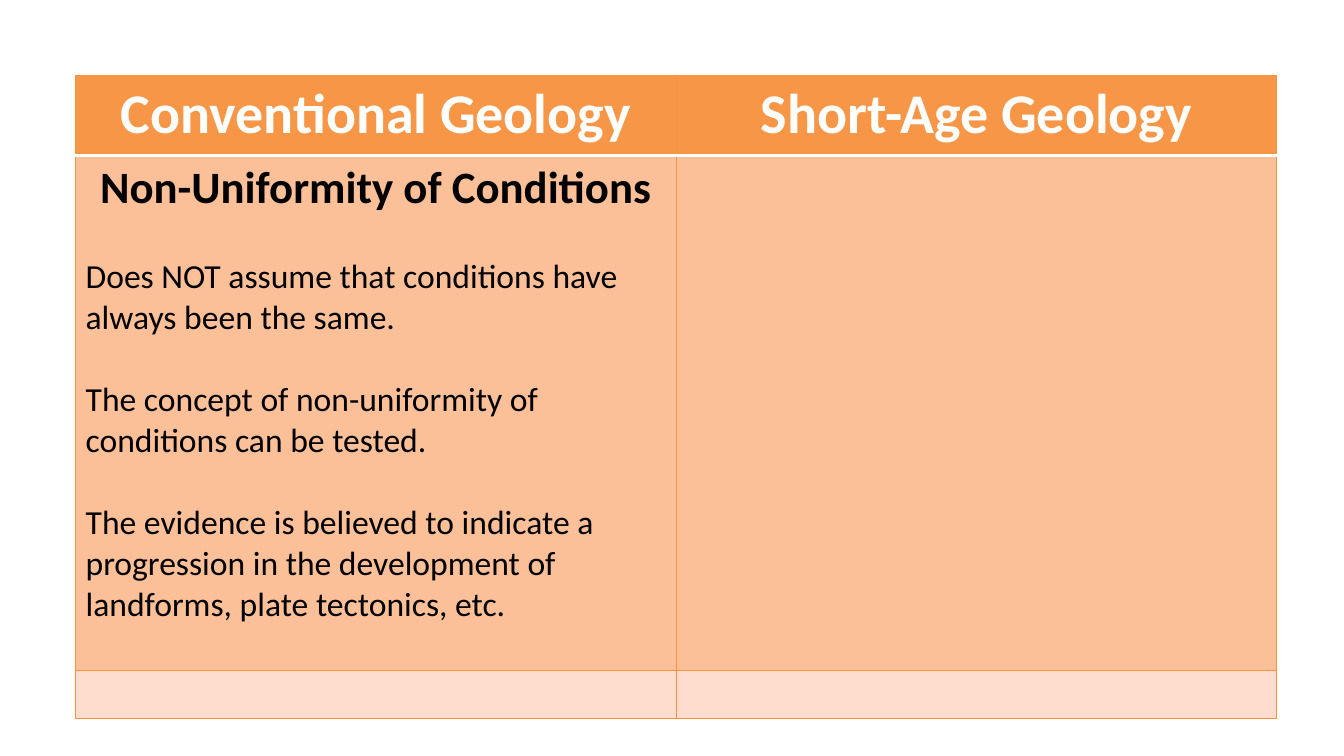
"""Build a slide with a table comparing conventional and short-age geology."""
from dataclasses import dataclass

from lxml import etree
from pptx import Presentation
from pptx.dml.color import RGBColor
from pptx.enum.text import PP_ALIGN
from pptx.oxml.ns import qn
from pptx.table import Table, _Cell
from pptx.util import Pt

CENTER, LEFT = PP_ALIGN.CENTER, PP_ALIGN.LEFT
PX = 9525
FONT = "Calibri"
COLORS = {
    "white": "FFFFFF",
    "black": "000000",
    "header": "F79646",
    "body": "FCC099",
    "footer": "FEDDCE",
    "border": "F69240",
}
SLIDE_W, SLIDE_H = 1280, 720
TABLE_X, TABLE_Y, COL_W = 72, 72, 572
BODY_GAP = 29.3


@dataclass(frozen=True)
class Para:
    text: str
    size: int = 24
    color: str = "black"
    bold: bool = False
    align: PP_ALIGN = LEFT
    gap: float = BODY_GAP


@dataclass(frozen=True)
class Row:
    height: int
    fill: str
    cells: tuple[tuple[Para, ...], ...] = ((), ())
    top: str = "border"
    bottom: str = "border"


def header(text: str) -> tuple[Para, ...]:
    return (Para(text, 40, "white", True, CENTER, 0),)


ROWS = (
    Row(76, "header", (header("Conventional Geology"), header("Short-Age Geology")),
        bottom="white"),
    Row(491, "body", ((
        Para("Non-Uniformity of Conditions", 32, "black", True, CENTER, 0),
        Para("Does NOT assume that conditions have always been the same."),
        Para("The concept of non-uniformity of conditions can be tested."),
        Para("The evidence is believed to indicate a progression in the "
             "development of landforms, plate tectonics, etc."),
    ), ()), top="white"),
    Row(45, "footer"),
)


def rgb(name: str) -> RGBColor:
    return RGBColor.from_string(COLORS[name])


def add_border(cell: _Cell, side: str, color: str) -> None:
    width = Pt(2 if color == "white" else 0.75)
    tc_pr = cell._tc.get_or_add_tcPr()
    ln = etree.SubElement(tc_pr, qn(f"a:ln{side}"), w=str(width))
    fill = etree.SubElement(ln, qn("a:solidFill"))
    etree.SubElement(fill, qn("a:srgbClr"), val=COLORS[color])


def write_paras(cell: _Cell, paras: tuple[Para, ...]) -> None:
    tf = cell.text_frame
    for i, para in enumerate(paras):
        p = tf.add_paragraph() if i else tf.paragraphs[0]
        p.text = para.text
        p.alignment = para.align
        p.space_before = Pt(para.gap)
        font = p.runs[0].font
        font.name, font.size, font.bold = FONT, Pt(para.size), para.bold
        font.color.rgb = rgb(para.color)


def fill_row(table: Table, index: int, row: Row) -> None:
    table.rows[index].height = row.height * PX
    for col, paras in enumerate(row.cells):
        cell = table.cell(index, col)
        borders = {"L": "border", "R": "border", "T": row.top, "B": row.bottom}
        for side, color in borders.items():
            add_border(cell, side, color)
        cell.fill.solid()
        cell.fill.fore_color.rgb = rgb(row.fill)
        write_paras(cell, paras)


def main() -> None:
    prs = Presentation()
    prs.slide_width, prs.slide_height = SLIDE_W * PX, SLIDE_H * PX
    s = prs.slides.add_slide(prs.slide_layouts[6])
    height = sum(row.height for row in ROWS)
    table = s.shapes.add_table(len(ROWS), 2, TABLE_X * PX, TABLE_Y * PX,
                               2 * COL_W * PX, height * PX).table
    table.horz_banding = False
    for index, row in enumerate(ROWS):
        fill_row(table, index, row)
    prs.save("out.pptx")


if __name__ == "__main__":
    main()
